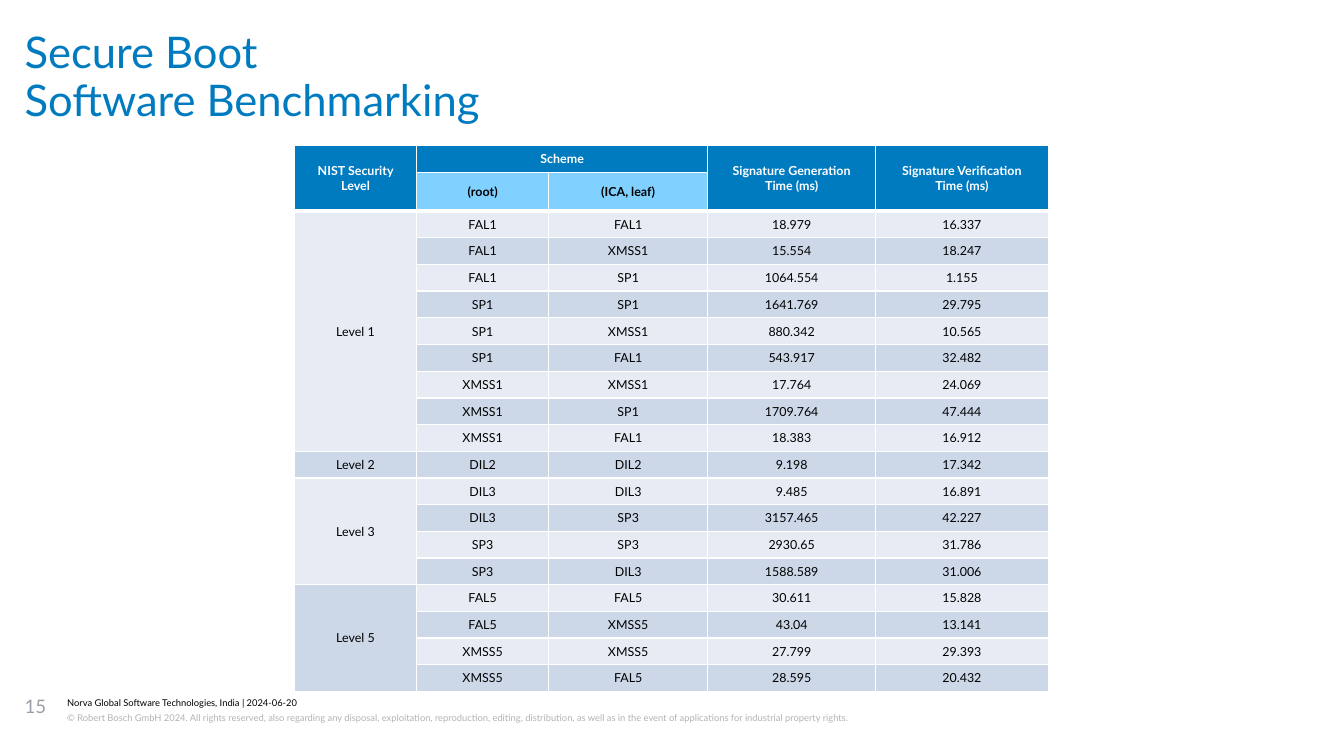
from itertools import cycle

from pptx import Presentation, util as u
from pptx.dml.color import RGBColor
from pptx.enum import text
from pptx.oxml import parse_xml
from pptx.oxml.ns import nsdecls

FONT = "Lato"
BLUE, SKY, WHITE, BLACK = "007BC0", "80D1FF", "FFFFFF", "000000"
LIGHT, DARK = "E7ECF4", "CCD7E8"
MARGIN, FULL_WIDTH, HEADING_TOP, HEADING_HEIGHT = 0.22, 11.55, 0.28, 0.43
FOOTER_LEFT, FOOTER_WIDTH = 0.6, 9.98
COLUMN_WIDTHS = [1.09, 1.18, 1.42, 1.5, 1.54]
BODY_HEIGHT, SUBHEADER_HEIGHT = 4.29, 0.34
HEADER_ROWS = 2

HEADERS = [
    ["NIST Security Level", "Scheme", "", "Signature Generation\nTime (ms)",
     "Signature Verification\nTime (ms)"],
    ["", "(root)", "(ICA, leaf)", "", ""],
]
HEADER_MERGES = [((0, 0), (1, 0)), ((0, 1), (0, 2)), ((0, 3), (1, 3)), ((0, 4), (1, 4))]
BENCHMARKS = {
    "Level 1": [
        ("FAL1", "FAL1", "18.979", "16.337"),
        ("FAL1", "XMSS1", "15.554", "18.247"),
        ("FAL1", "SP1", "1064.554", "1.155"),
        ("SP1", "SP1", "1641.769", "29.795"),
        ("SP1", "XMSS1", "880.342", "10.565"),
        ("SP1", "FAL1", "543.917", "32.482"),
        ("XMSS1", "XMSS1", "17.764", "24.069"),
        ("XMSS1", "SP1", "1709.764", "47.444"),
        ("XMSS1", "FAL1", "18.383", "16.912"),
    ],
    "Level 2": [("DIL2", "DIL2", "9.198", "17.342")],
    "Level 3": [
        ("DIL3", "DIL3", "9.485", "16.891"),
        ("DIL3", "SP3", "3157.465", "42.227"),
        ("SP3", "SP3", "2930.65", "31.786"),
        ("SP3", "DIL3", "1588.589", "31.006"),
    ],
    "Level 5": [
        ("FAL5", "FAL5", "30.611", "15.828"),
        ("FAL5", "XMSS5", "43.04", "13.141"),
        ("XMSS5", "XMSS5", "27.799", "29.393"),
        ("XMSS5", "FAL5", "28.595", "20.432"),
    ],
}


def rgb(value):
    return RGBColor.from_string(value)


def set_all(target, values):
    for name, value in values.items():
        setattr(target, name, value)


def style_font(font, size, color, bold=False):
    set_all(font, {"name": FONT, "size": u.Pt(size), "bold": bold})
    font.color.rgb = rgb(color)


def fill_text(shape, box, words, size, color, spacing=1.0, after=0):
    """Place a text shape at box (inches) and give it one formatted paragraph."""
    set_all(shape, dict(zip(("left", "top", "width", "height"), map(u.Inches, box))))
    frame = shape.text_frame
    set_all(frame, {
        "margin_left": 0, "margin_top": 0, "margin_right": 0, "margin_bottom": 0,
        "word_wrap": True, "auto_size": text.MSO_AUTO_SIZE.NONE,
        "vertical_anchor": text.MSO_ANCHOR.TOP, "text": words,
    })
    paragraph = frame.paragraphs[0]
    set_all(paragraph, {"alignment": text.PP_ALIGN.LEFT, "line_spacing": spacing,
                        "space_before": u.Pt(0), "space_after": u.Pt(after)})
    style_font(paragraph.runs[0].font, size, color)
    return paragraph


def add_headings(slide):
    topic = slide.placeholders[1]
    for row, (holder, words) in enumerate(
            [(topic, "Secure Boot"), (slide.shapes.title, "Software Benchmarking")]):
        box = (MARGIN, HEADING_TOP + row * HEADING_HEIGHT, FULL_WIDTH, HEADING_HEIGHT)
        paragraph = fill_text(holder, box, words, 28, BLUE, 0.89)
        if holder is topic:
            properties = paragraph._p.get_or_add_pPr()
            properties.set("marL", "0")
            properties.set("indent", "0")
            properties.append(parse_xml(f"<a:buNone {nsdecls('a')}/>"))


def add_footer(slide):
    lines = [
        ((FOOTER_LEFT, 6.22, FOOTER_WIDTH, 0.12),
         "Norva Global Software Technologies, India | 2024-06-20", 6, BLACK, 1.07, 1),
        ((FOOTER_LEFT, 6.34, FOOTER_WIDTH, 0.24),
         "© Robert Bosch GmbH 2024. All rights reserved, also regarding any disposal, "
         "exploitation, reproduction, editing, distribution, as well as in the event of "
         "applications for industrial property rights.", 6, "B2B3B5", 1.2, 1),
        ((MARGIN, 6.2, 0.32, 0.45), "15", 12, "999FA6"),
    ]
    for line in lines:
        fill_text(slide.shapes.add_textbox(0, 0, 0, 0), *line)


def add_borders(cell, top=1, bottom=1):
    properties = cell._tc.get_or_add_tcPr()
    for side, width in {"L": 1, "R": 1, "T": top, "B": bottom}.items():
        properties.append(parse_xml(
            f'<a:ln{side} {nsdecls("a")} w="{u.Pt(width)}"><a:solidFill>'
            f'<a:srgbClr val="{WHITE}"/></a:solidFill></a:ln{side}>'))


def fill_cell(cell, words, fill, color=BLACK, bold=False, **borders):
    set_all(cell, {
        "text": words, "vertical_anchor": text.MSO_ANCHOR.MIDDLE,
        "margin_left": u.Inches(0.09), "margin_right": u.Inches(0.09),
        "margin_top": u.Inches(0.04), "margin_bottom": u.Inches(0.04),
    })
    for paragraph in cell.text_frame.paragraphs:
        paragraph.alignment = text.PP_ALIGN.CENTER
        style_font(paragraph.font, 8, color, bold)
        for run in paragraph.runs:
            style_font(run.font, 8, color, bold)
    add_borders(cell, **borders)
    cell.fill.solid()
    cell.fill.fore_color.rgb = rgb(fill)


def fill_header(table):
    for row, labels in enumerate(HEADERS):
        for column, label in enumerate(labels):
            scheme_part = row == 1 and label
            bottom = 1 if label == "Scheme" else 3
            fill_cell(table.cell(row, column), label, SKY if scheme_part else BLUE,
                      BLACK if scheme_part else WHITE, True, bottom=bottom)
    for first, last in HEADER_MERGES:
        table.cell(*first).merge(table.cell(*last))


def fill_body(table):
    row = HEADER_ROWS
    row_fills = cycle([LIGHT, DARK])
    for (level, results), level_fill in zip(BENCHMARKS.items(), cycle([LIGHT, DARK])):
        first = row
        for result in results:
            row_fill = next(row_fills)
            top = 3 if row == HEADER_ROWS else 1
            fill_cell(table.cell(row, 0), level if row == first else "", level_fill, top=top)
            for column, value in enumerate(result, 1):
                fill_cell(table.cell(row, column), value, row_fill, top=top)
            row += 1
        if len(results) > 1:
            table.cell(first, 0).merge(table.cell(row - 1, 0))


def add_benchmark_table(slide):
    body_rows = sum(map(len, BENCHMARKS.values()))
    row_height = BODY_HEIGHT / body_rows
    heights = [row_height, SUBHEADER_HEIGHT] + [row_height] * body_rows
    table = slide.shapes.add_table(
        len(heights), len(COLUMN_WIDTHS), u.Inches(2.63), u.Inches(1.3),
        u.Inches(sum(COLUMN_WIDTHS)), u.Inches(sum(heights))).table
    set_all(table, {"first_row": False, "horz_banding": False})
    for column, width in zip(table.columns, COLUMN_WIDTHS):
        column.width = u.Inches(width)
    for row, height in zip(table.rows, heights):
        row.height = u.Inches(height)
    fill_header(table)
    fill_body(table)


def main():
    deck = Presentation()
    set_all(deck, {"slide_width": u.Inches(12), "slide_height": u.Inches(6.75)})
    slide = deck.slides.add_slide(deck.slide_layouts[1])
    add_headings(slide)
    add_footer(slide)
    add_benchmark_table(slide)
    deck.save("out.pptx")


if __name__ == "__main__":
    main()
